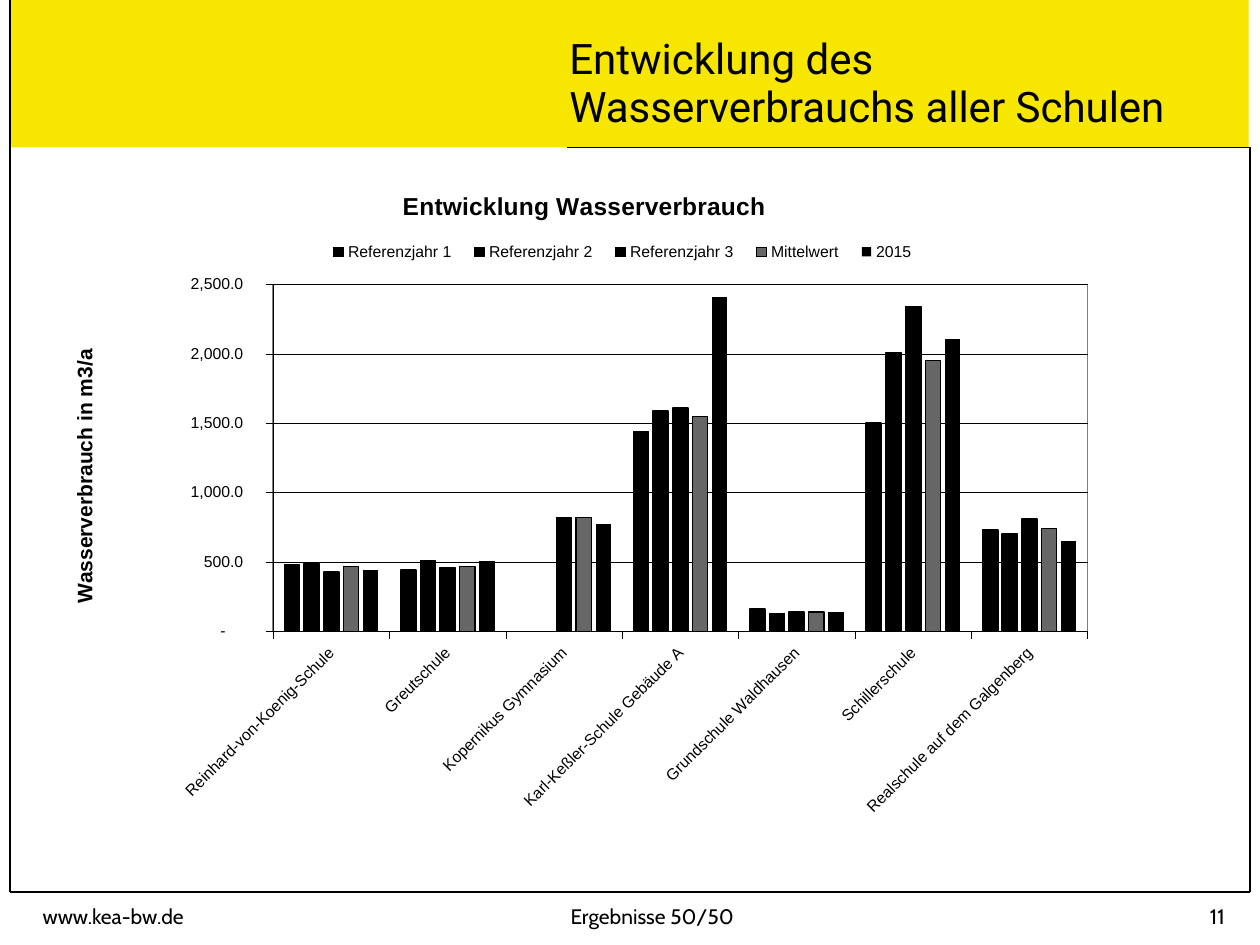
from dataclasses import dataclass

from lxml import etree
from pptx import Presentation
from pptx import util as u
from pptx.chart import data
from pptx.dml.color import RGBColor
from pptx.enum import chart as charts, shapes, text
from pptx.oxml import parse_xml
from pptx.oxml.ns import nsdecls, qn


@dataclass(frozen=True)
class Theme:
    yellow: RGBColor = RGBColor(0xF6, 0xE6, 0x00)
    black: RGBColor = RGBColor(0, 0, 0)
    grey: RGBColor = RGBColor(0x66, 0x66, 0x66)
    heading: int = 24
    footer: int = 12
    chart_title: int = 14
    axis_title: int = 12
    chart_text: int = 10
    labels: int = 9


theme = Theme()


def write(frame, words, font, size, bold=False, align=None, spacing=None):
    para = frame.paragraphs[0]
    para.alignment = align
    para.line_spacing = spacing
    span = para.add_run()
    span.text = words
    span.font.name = font
    span.font.size = u.Pt(size)
    span.font.bold = bold
    span.font.color.rgb = theme.black


def place(element, index, position, inner=False):
    for old in element.findall(qn("c:layout")):
        element.remove(old)
    tags = '<c:layoutTarget val="inner"/>' if inner else ""
    tags += '<c:xMode val="edge"/><c:yMode val="edge"/>'
    tags += "".join(f'<c:{key} val="{value}"/>' for key, value in zip("xywh", position))
    element.insert(index, parse_xml(
        f'<c:layout {nsdecls("c")}><c:manualLayout>{tags}</c:manualLayout></c:layout>'))


deck = Presentation()
deck.slide_width, deck.slide_height = u.Inches(10), u.Inches(7.5)
page = deck.slides.add_slide(deck.slide_layouts[6])

left, right, band_bottom, frame_bottom = 0.08, 9.92, 1.17, 7.08
band = page.shapes.add_shape(shapes.MSO_SHAPE.RECTANGLE, u.Inches(left), 0,
                             u.Inches(9.83), u.Inches(band_bottom))
band.shadow.inherit = False
band.fill.solid()
band.fill.fore_color.rgb = theme.yellow
band.line.fill.background()

for ends in [
    (4.5, band_bottom, right, band_bottom),
    (left, 0, left, frame_bottom),
    (right, frame_bottom, left, frame_bottom),
    (right, frame_bottom, right, band_bottom),
]:
    rule = page.shapes.add_connector(shapes.MSO_CONNECTOR.STRAIGHT, *map(u.Inches, ends))
    rule.line.color.rgb = theme.black
    rule.line.width = u.Pt(0.75)
    etree.SubElement(rule._element.spPr, qn("a:effectLst"))

for words, position, font, size, align, spacing in [
    ("www.kea-bw.de", (0.24, 7.12, 3.17, 0.33), "Cabin", theme.footer, None, None),
    ("Ergebnisse 50/50", (4.43, 7.12, 4.67, 0.28), "Cabin", theme.footer, None, None),
    ("11", (9.25, 7.12, 0.57, 0.33), "Cabin", theme.footer, text.PP_ALIGN.RIGHT, None),
    ("Entwicklung des Wasserverbrauchs aller Schulen", (4.42, 0.24, 5.25, 0.94),
     "Roboto", theme.heading, None, 0.95),
]:
    box = page.shapes.add_textbox(*map(u.Inches, position))
    box.text_frame.word_wrap = True
    write(box.text_frame, words, font, size, align=align, spacing=spacing)

usage = data.CategoryChartData()
usage.categories = [
    "Reinhard-von-Koenig-Schule", "Greutschule", "Kopernikus Gymnasium",
    "Karl-Keßler-Schule Gebäude A", "Grundschule Waldhausen", "Schillerschule",
    "Realschule auf dem Galgenberg",
]
years = [
    ("Referenzjahr 1", (480, 440, None, 1440, 160, 1500, 730), theme.black, 1),
    ("Referenzjahr 2", (490, 510, None, 1590, 130, 2010, 700), theme.black, 1),
    ("Referenzjahr 3", (430, 460, 820, 1610, 140, 2340, 810), theme.black, 1),
    ("Mittelwert", (470, 470, 820, 1550, 140, 1950, 740), theme.grey, 0.75),
    ("2015", (440, 510, 770, 2410, 140, 2110, 650), theme.black, None),
]
for name, values, color, outline in years:
    usage.add_series(name, values)

chart = page.shapes.add_chart(
    charts.XL_CHART_TYPE.COLUMN_CLUSTERED,
    *map(u.Inches, (0.35, 1.31, 9.37, 5.51)), usage).chart
chart.font.name = "Arial"
chart.font.size = u.Pt(theme.chart_text)
chart.font.color.rgb = theme.black

plot = chart.plots[0]
plot.gap_width = 150
plot.overlap = -30
plot.vary_by_categories = False
for series, (name, values, color, outline) in zip(plot.series, years):
    series.invert_if_negative = False
    series.format.fill.solid()
    series.format.fill.fore_color.rgb = color
    if outline:
        series.format.line.color.rgb = theme.black
        series.format.line.width = u.Pt(outline)
    else:
        series.format.line.fill.background()

schools, amounts = chart.category_axis, chart.value_axis
amounts.minimum_scale, amounts.maximum_scale, amounts.major_unit = 0, 2500, 500
amounts.has_major_gridlines = True
amounts.tick_labels.number_format = (
    '_-* #,##0.0\\ _€_-;\\-* #,##0.0\\ _€_-;_-* "-"??\\ _€_-;_-@_-')
amounts.tick_labels.number_format_is_linked = False
for axis in (schools, amounts):
    axis.major_tick_mark = charts.XL_TICK_MARK.OUTSIDE
    axis.minor_tick_mark = charts.XL_TICK_MARK.NONE
for line in (schools.format.line, amounts.format.line, amounts.major_gridlines.format.line):
    line.color.rgb = theme.black
    line.width = u.Pt(0.25)

chart.has_legend = True
legend = chart.legend
legend.position = charts.XL_LEGEND_POSITION.TOP
legend.include_in_layout = False
for font in (schools.tick_labels.font, amounts.tick_labels.font, legend.font):
    font.name = "Arial"
    font.size = u.Pt(theme.labels)
    font.color.rgb = theme.black
label_body = schools._element.find(qn("c:txPr")).find(qn("a:bodyPr"))
label_body.set("rot", "-2700000")
label_body.set("vert", "horz")

chart.has_title = True
write(chart.chart_title.text_frame, "Entwicklung Wasserverbrauch", "Arial",
      theme.chart_title, bold=True)
axis_frame = amounts.axis_title.text_frame
write(axis_frame, "Wasserverbrauch in m3/a", "Arial", theme.axis_title, bold=True)
axis_body = axis_frame._txBody.find(qn("a:bodyPr"))
axis_body.set("rot", "-5400000")
axis_body.set("vert", "horz")

area = chart._chartSpace.find(qn("c:chart")).find(qn("c:plotArea"))
area.append(parse_xml(
    f'<c:spPr {nsdecls("c", "a")}><a:solidFill><a:srgbClr val="FFFFFF"/></a:solidFill>'
    '<a:ln w="9525"><a:solidFill><a:srgbClr val="808080"/></a:solidFill></a:ln></c:spPr>'))
place(area, 0, (0.194, 0.172, 0.69, 0.5), inner=True)
place(legend._element, 1, (0.23, 0.1, 0.52, 0.05))
place(chart.chart_title._element, 1, (0.3, 0.03))
place(amounts.axis_title._element, 1, (0.02, 0.26))

deck.save("out.pptx")
